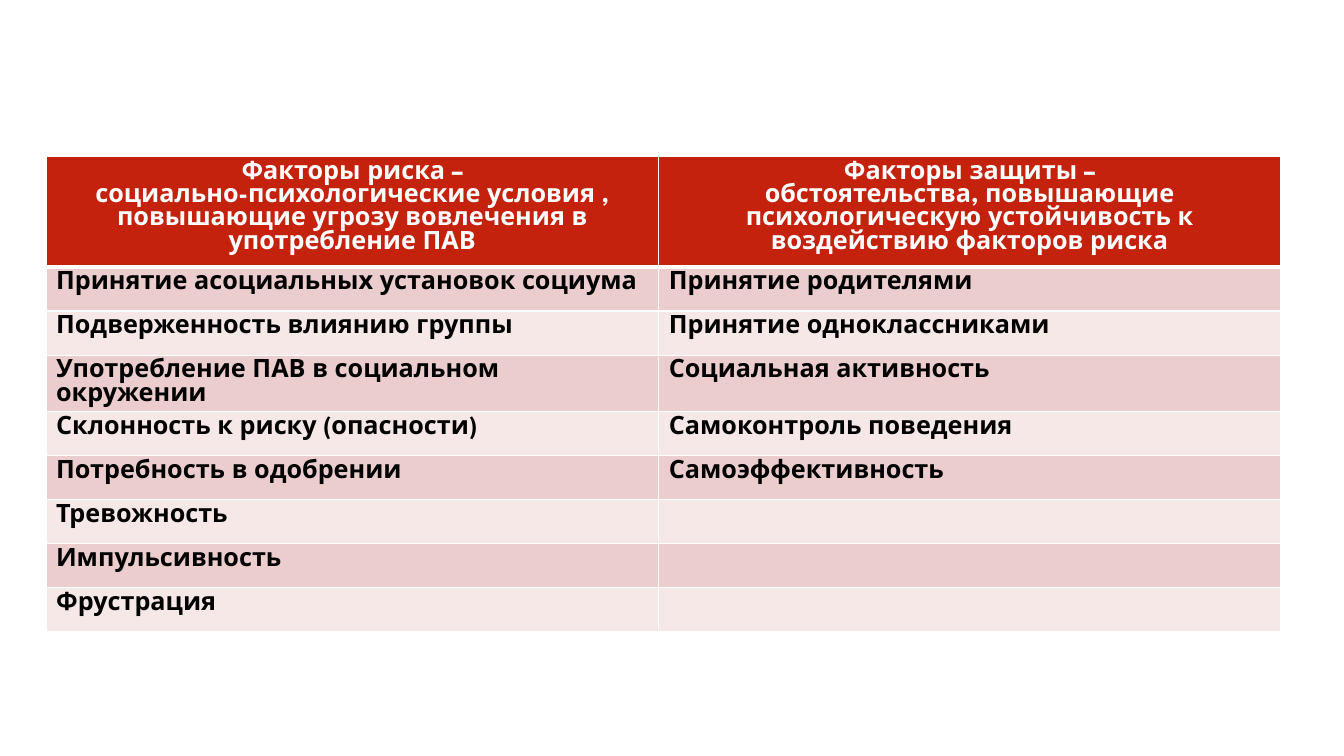
import pptx
import pptx.dml.color
import pptx.enum.text
import pptx.oxml
import pptx.oxml.ns
import pptx.util
from pptx.util import Cm


def color(value):
    return pptx.dml.color.RGBColor.from_string(value)


def add_border(cell, side, width, value):
    cell._tc.get_or_add_tcPr().append(pptx.oxml.parse_xml(
        f'<a:ln{side} {pptx.oxml.ns.nsdecls("a")} w="{pptx.util.Pt(width)}">'
        f'<a:solidFill><a:srgbClr val="{value}"/></a:solidFill></a:ln{side}>'))


WHITE = "FFFFFF"
BLACK = "000000"
HEADER_RED = "C4220D"
BAND_FILLS = ["F5E8E7", "EACDCC"]

factors = [
    ("Факторы риска –\nсоциально-психологические условия , повышающие угрозу вовлечения в употребление ПАВ",
     "Факторы защиты –\nобстоятельства, повышающие психологическую устойчивость к воздействию факторов риска"),
    ("Принятие асоциальных установок социума", "Принятие родителями"),
    ("Подверженность влиянию группы", "Принятие одноклассниками"),
    ("Употребление ПАВ в социальном окружении", "Социальная активность"),
    ("Склонность к риску (опасности)", "Самоконтроль поведения"),
    ("Потребность в одобрении", "Самоэффективность"),
    ("Тревожность", ""),
    ("Импульсивность", ""),
    ("Фрустрация", ""),
]

presentation = pptx.Presentation()
presentation.slide_width = Cm(33.87)
presentation.slide_height = Cm(19.05)
slide = presentation.slides.add_slide(presentation.slide_layouts[6])

table = slide.shapes.add_table(
    len(factors), 2, Cm(1.16), Cm(3.95), Cm(31.11), Cm(11.65)).table
table.columns[0].width = Cm(15.44)
table.columns[1].width = Cm(15.67)

for row_index, row_texts in enumerate(factors):
    is_header = row_index == 0
    table.rows[row_index].height = Cm(2.78 if is_header else 1.11)
    for column_index, text in enumerate(row_texts):
        cell = table.cell(row_index, column_index)
        for side in "LRTB":
            thick = (is_header and side == "B") or (row_index == 1 and side == "T")
            add_border(cell, side, 3 if thick else 1, WHITE)
        cell.fill.solid()
        cell.fill.fore_color.rgb = color(HEADER_RED if is_header else BAND_FILLS[row_index % 2])
        cell.text = text
        for paragraph in cell.text_frame.paragraphs:
            if is_header:
                paragraph.alignment = pptx.enum.text.PP_ALIGN.CENTER
            paragraph.font.name = "League Spartan"
            paragraph.font.size = pptx.util.Pt(18)
            paragraph.font.bold = True
            paragraph.font.color.rgb = color(WHITE if is_header else BLACK)

presentation.save("out.pptx")
